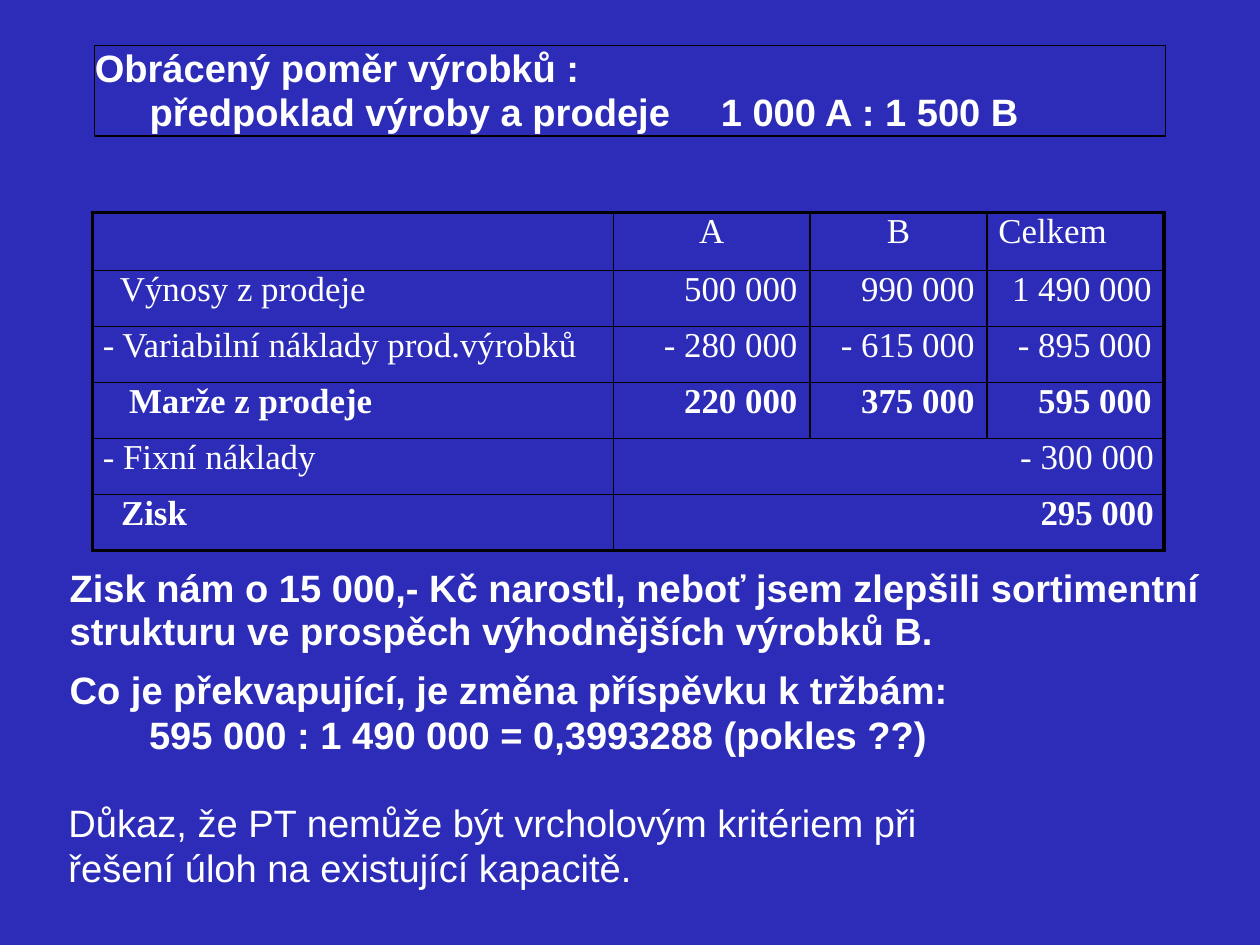
from dataclasses import dataclass
from lxml.etree import SubElement
from pptx import Presentation
from pptx.dml.color import RGBColor
from pptx.enum.text import MSO_ANCHOR, MSO_AUTO_SIZE, PP_ALIGN
from pptx.oxml.ns import qn
from pptx.util import Emu, Inches, Pt

LEFT, MID, RIGHT = PP_ALIGN.LEFT, PP_ALIGN.CENTER, PP_ALIGN.RIGHT


@dataclass(frozen=True)
class Theme:
    blue: RGBColor = RGBColor(0x2C, 0x2C, 0xB8)
    white: RGBColor = RGBColor(0xFF, 0xFF, 0xFF)
    black: RGBColor = RGBColor(0, 0, 0)
    sans: str = "Arial"
    serif: str = "Times New Roman"
    head: float = 24
    body: float = 22
    thin: float = 1
    thick: float = 2.25


@dataclass(frozen=True)
class Line:
    """A paragraph; indents and tab in grid units, spacing in points."""
    text: str
    pitch: float = 27.9
    before: float = 0
    left: float = 0
    right: float = 0
    tab: float = 0
    align: PP_ALIGN = LEFT
    bold: bool = True


@dataclass(frozen=True)
class Row:
    """A table row; one value spans all the number columns."""
    label: str
    indent: float
    values: tuple[str, ...]
    bold: bool = False


THEME = Theme()
WIDTH, HEIGHT = Inches(11.03), Inches(8.27)
COLS, ROWS = 110.3, 82.7

TITLE = (
    Line("Obrácený poměr výrobků :", 27.8),
    Line("předpoklad výroby a prodeje\t1 000 A : 1 500 B", 27.8, left=4.8, tab=52.2),
)
NOTES = (
    Line("Zisk nám o 15 000,- Kč narostl, neboť jsem zlepšili sortimentní "
         "strukturu ve prospěch výhodnějších výrobků B.", 26.8, left=0.1),
    Line("Co je překvapující, je změna příspěvku k tržbám:", before=9.7, left=0.1),
    Line("595 000 : 1 490 000 = 0,3993288 (pokles ??)", right=16.8, align=MID),
    Line("Důkaz, že PT nemůže být vrcholovým kritériem při řešení úloh na "
         "existující kapacitě.", before=27.9, right=16.8, bold=False),
)
SPANS = (45.6, 17.2, 15.5, 15.5)
HEADS = (("A", MID), ("B", MID), ("Celkem", LEFT))
DATA = (
    Row("Výnosy z prodeje", 2.4, ("500 000", "990 000", "1 490 000")),
    Row("- Variabilní náklady prod.výrobků", 0.9,
        ("- 280 000", "- 615 000", "- 895 000")),
    Row("Marže z prodeje", 3.2, ("220 000", "375 000", "595 000"), True),
    Row("- Fixní náklady", 0.9, ("- 300 000",)),
    Row("Zisk", 2.5, ("295 000",), True),
)


def across(cols: float) -> Emu:
    return Emu(round(WIDTH * cols / COLS))


def down(rows: float) -> Emu:
    return Emu(round(HEIGHT * rows / ROWS))


def style(par, font: str, size: float, bold: bool) -> None:
    for run in par.runs:
        run.font.name, run.font.size = font, Pt(size)
        run.font.bold = bold
        run.font.color.rgb = THEME.white


def write(frame, lines: tuple[Line, ...]) -> None:
    frame.word_wrap = True
    frame.auto_size = MSO_AUTO_SIZE.NONE
    frame.vertical_anchor = MSO_ANCHOR.TOP
    frame.margin_left = frame.margin_right = 0
    frame.margin_top = frame.margin_bottom = 0
    frame.text = "\n".join(line.text for line in lines)
    for par, line in zip(frame.paragraphs, lines):
        par.alignment = line.align
        par.line_spacing = Pt(line.pitch)
        par.space_before = Pt(line.before)
        props = par._p.get_or_add_pPr()
        props.set("marL", str(across(line.left)))
        props.set("marR", str(across(line.right)))
        props.set("indent", "0")
        if line.tab:
            tabs = SubElement(props, qn("a:tabLst"))
            SubElement(tabs, qn("a:tab"), pos=str(across(line.tab)), algn="l")
        style(par, THEME.sans, THEME.head, line.bold)


def fill(cell, text: str, align: PP_ALIGN = LEFT, left: float = 0,
         right: float = 0, bold: bool = False) -> None:
    cell.text_frame.text = text
    par = cell.text_frame.paragraphs[0]
    par.alignment = align
    style(par, THEME.serif, THEME.body, bold)
    cell.margin_left, cell.margin_right = across(left), across(right)


def border(cell, edges: dict[str, bool]) -> None:
    """Rule the four sides, thick where the side is a table edge."""
    props = cell._tc.get_or_add_tcPr()
    for side, outer in edges.items():
        width = Pt(THEME.thick if outer else THEME.thin)
        rule = SubElement(props, qn(f"a:ln{side}"), w=str(width))
        paint = SubElement(rule, qn("a:solidFill"))
        SubElement(paint, qn("a:srgbClr"), val=str(THEME.black))


def draw_table(slide) -> None:
    count = len(DATA) + 1
    frame = slide.shapes.add_table(count, len(SPANS), across(8.1), down(18.6),
                                   across(sum(SPANS)), down(29.6))
    table = frame.table
    table.first_row = table.horz_banding = False
    for col, span in zip(table.columns, SPANS):
        col.width = across(span)
    for num, row in enumerate(table.rows):
        row.height = down(4.9 if num else 5.1)

    # Wording of the head and the rows
    for num, (text, align) in enumerate(HEADS, 1):
        fill(table.cell(0, num), text, align, left=1 if align == LEFT else 0)
    for num, row in enumerate(DATA, 1):
        fill(table.cell(num, 0), row.label, left=row.indent, bold=row.bold)
        single = len(row.values) == 1
        if single:
            table.cell(num, 1).merge(table.cell(num, len(SPANS) - 1))
        for col, text in enumerate(row.values, 1):
            fill(table.cell(num, col), text, RIGHT,
                 right=0.9 if single else 1.1, bold=row.bold)

    # Rules and ground of every cell
    for num in range(count):
        for col in range(len(SPANS)):
            cell = table.cell(num, col)
            if cell.is_spanned:
                continue
            cell.margin_top = cell.margin_bottom = 0
            end = col + (cell.span_width if cell.is_merge_origin else 1)
            border(cell, {"L": col == 0, "R": end == len(SPANS),
                          "T": num == 0, "B": num == count - 1})
            cell.fill.solid()
            cell.fill.fore_color.rgb = THEME.blue


def main() -> None:
    deck = Presentation()
    deck.slide_width, deck.slide_height = WIDTH, HEIGHT
    slide = deck.slides.add_slide(deck.slide_layouts[5])
    ground = slide.background.fill
    ground.solid()
    ground.fore_color.rgb = THEME.blue

    # Title
    title = slide.shapes.title
    title.left, title.top = across(8.3), down(4)
    title.width, title.height = across(93.7), down(7.9)
    title.fill.solid()
    title.fill.fore_color.rgb = THEME.blue
    title.line.color.rgb = THEME.black
    title.line.width = Pt(0.75)
    write(title.text_frame, TITLE)

    # Notes under the table
    notes = slide.shapes.add_textbox(across(6), down(49.7), across(99), down(28.6))
    write(notes.text_frame, NOTES)

    draw_table(slide)
    deck.save("out.pptx")


if __name__ == "__main__":
    main()
